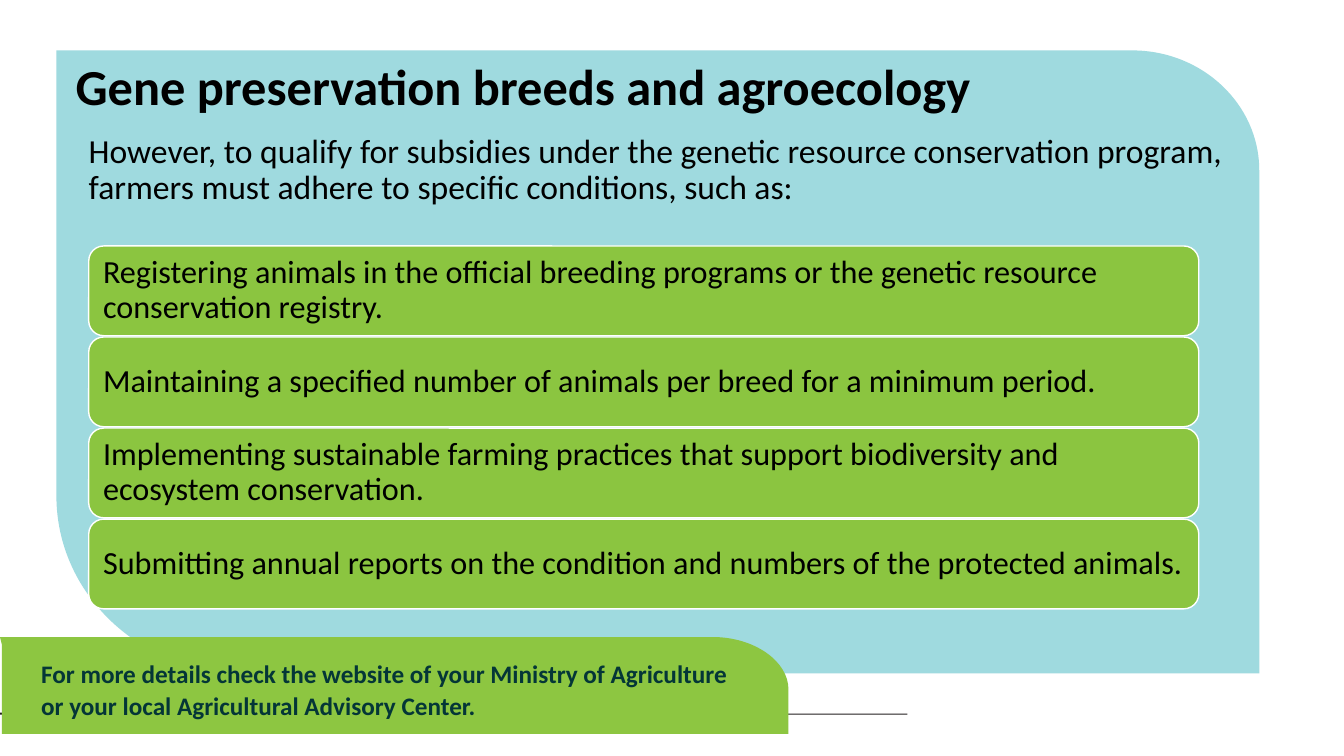
"""Build the slide on gene preservation breeds and agroecology."""
from lxml import etree
from pptx import Presentation
from pptx.dml.color import RGBColor
from pptx.enum.shapes import MSO_SHAPE
from pptx.enum.text import MSO_ANCHOR, MSO_AUTO_SIZE, PP_ALIGN
from pptx.oxml.ns import qn
from pptx.util import Inches, Pt

ROUNDED = MSO_SHAPE.ROUNDED_RECTANGLE
TOP, MIDDLE = MSO_ANCHOR.TOP, MSO_ANCHOR.MIDDLE
LEFT, NO_FIT = PP_ALIGN.LEFT, MSO_AUTO_SIZE.NONE

TITLE = "Gene preservation breeds and agroecology"
INTRO = ("However, to qualify for subsidies under the genetic resource conservation program, "
         "farmers must adhere to specific conditions, such as:")
CONDITIONS = [
    "Registering animals in the official breeding programs or the genetic resource conservation registry.",
    "Maintaining a specified number of animals per breed for a minimum period.",
    "Implementing sustainable farming practices that support biodiversity and ecosystem conservation.",
    "Submitting annual reports on the condition and numbers of the protected animals.",
]
FOOTER = ("For more details check the website of your Ministry of Agriculture "
          "or your local Agricultural Advisory Center.")

WIDTH, HEIGHT = 13.33, 7.5
TITLE_BOX = (0.65, 0.56, 11.68, 1.09)
INTRO_BOX = (0.53, 1.28, 11.79, 3.6)
FOOTER_BOX = (0.31, 6.46, 7.24, 0.73)
ROW_LEFT, ROW_WIDTH, ROW_HEIGHT = 0.88, 11.01, 0.89
FIRST_ROW, LAST_ROW = 2.44, 5.15
ROW_PITCH = (LAST_ROW - FIRST_ROW) / (len(CONDITIONS) - 1)

# pairs are line ends, six numbers are two curve handles and an end
OUTLINES = [
    ("231F20", [(9, 7.09), (4.43, 7.09), (4.41, 7.09, 2.8, 7.08, 2.23, 7.07),
                (1.55, 7.05, 0.52, 7.08, 0.14, 7.08), (0.06, 7.09, 0.01, 7.09, 0, 7.09),
                (0, 7.07), (0.01, 7.07, 0.06, 7.07, 0.14, 7.07),
                (0.52, 7.06, 1.55, 7.04, 2.23, 7.05), (2.81, 7.07, 4.41, 7.08, 4.43, 7.08),
                (9, 7.08)]),
    ("9FDADF", [(0.56, 0.5), (5.22, 0.5), (6.57, 0.5), (11.23, 0.5),
                (11.92, 0.5, 12.49, 1.03, 12.49, 1.69), (12.49, 6.68), (7.83, 6.68),
                (7.07, 6.68), (2.42, 6.68), (1.39, 6.68, 0.56, 5.89, 0.56, 4.92)]),
    ("8DC641", [(0, 6.32), (7.07, 6.32), (7.48, 6.32, 7.82, 6.56, 7.82, 6.84),
                (7.82, 7.28), (0.02, 7.28), (0.02, 6.51),
                (0.02, 6.47, 0.02, 6.43, 0.02, 6.4)]),
]


def color(value):
    """Turn a hex string into a colour."""
    return RGBColor.from_string(value)


def bend(shape, segments):
    """Turn the straight segments that have handles into curves."""
    lines = list(shape.element.iter(qn("a:lnTo")))
    for line, segment in zip(lines, segments[1:]):
        if len(segment) == 6:
            line.tag = qn("a:cubicBezTo")
            for slot, start in enumerate((0, 2)):
                handle = etree.Element(qn("a:pt"))
                handle.set("x", str(Inches(segment[start]) - shape.left))
                handle.set("y", str(Inches(segment[start + 1]) - shape.top))
                line.insert(slot, handle)


def draw_outline(page, fill, segments):
    """Draw a filled outline of lines and curves."""
    ends = [(Inches(segment[-2]), Inches(segment[-1])) for segment in segments]
    builder = page.shapes.build_freeform(*ends[0], scale=1.0)
    builder.add_line_segments(ends[1:], close=True)
    shape = builder.convert_to_shape()
    bend(shape, segments)
    shape.shadow.inherit = False
    shape.fill.solid()
    shape.fill.fore_color.rgb = color(fill)
    shape.line.fill.background()


def place(box, left, top, width, height):
    """Put a box at a place given in inches."""
    box.left, box.top, box.width, box.height = map(Inches, (left, top, width, height))


def write(box, text, size, ink="000000", bold=False, anchor=TOP, indent=0, right=0.1, **spacing):
    """Write one formatted paragraph into a box."""
    frame = box.text_frame
    frame.text = text
    para = frame.paragraphs[0]
    props = para._p.get_or_add_pPr()
    props.set("marL", str(Inches(indent)))
    props.set("indent", "0")
    etree.SubElement(props, qn("a:buNone"))
    formats = [
        (frame, {"word_wrap": True, "auto_size": NO_FIT, "vertical_anchor": anchor,
                 "margin_right": Inches(right)}),
        (para, {"alignment": LEFT, "line_spacing": 0.9, "space_before": Pt(0), **spacing}),
        (para.runs[0].font, {"name": "Calibri", "size": Pt(size), "bold": bold}),
    ]
    for target, values in formats:
        for name, value in values.items():
            setattr(target, name, value)
    para.runs[0].font.color.rgb = color(ink)


def main():
    """Build and save the deck."""
    deck = Presentation()
    deck.slide_width, deck.slide_height = Inches(WIDTH), Inches(HEIGHT)
    page = deck.slides.add_slide(deck.slide_layouts[1])

    for fill, segments in OUTLINES:
        draw_outline(page, fill, segments)

    title, intro = page.shapes.title, page.placeholders[1]
    for box, spot in ((intro, INTRO_BOX), (title, TITLE_BOX)):
        place(box, *spot)
        page.shapes.element.append(box.element)
    write(title, TITLE, 36, bold=True)
    write(intro, INTRO, 24, indent=0.25)

    for index, condition in enumerate(CONDITIONS):
        row = page.shapes.add_shape(ROUNDED, 0, 0, 0, 0)
        place(row, ROW_LEFT, FIRST_ROW + index * ROW_PITCH, ROW_WIDTH, ROW_HEIGHT)
        row.shadow.inherit = False
        row.fill.solid()
        row.fill.fore_color.rgb = color("8BC540")
        row.line.color.rgb = color("FFFFFF")
        row.line.width = Pt(1)
        write(row, condition, 23, anchor=MIDDLE, right=0.05)

    footer = page.shapes.add_textbox(0, 0, 0, 0)
    place(footer, *FOOTER_BOX)
    write(footer, FOOTER, 18, ink="043637", bold=True, line_spacing=1.07, space_after=Pt(8))

    deck.save("out.pptx")


if __name__ == "__main__":
    main()
